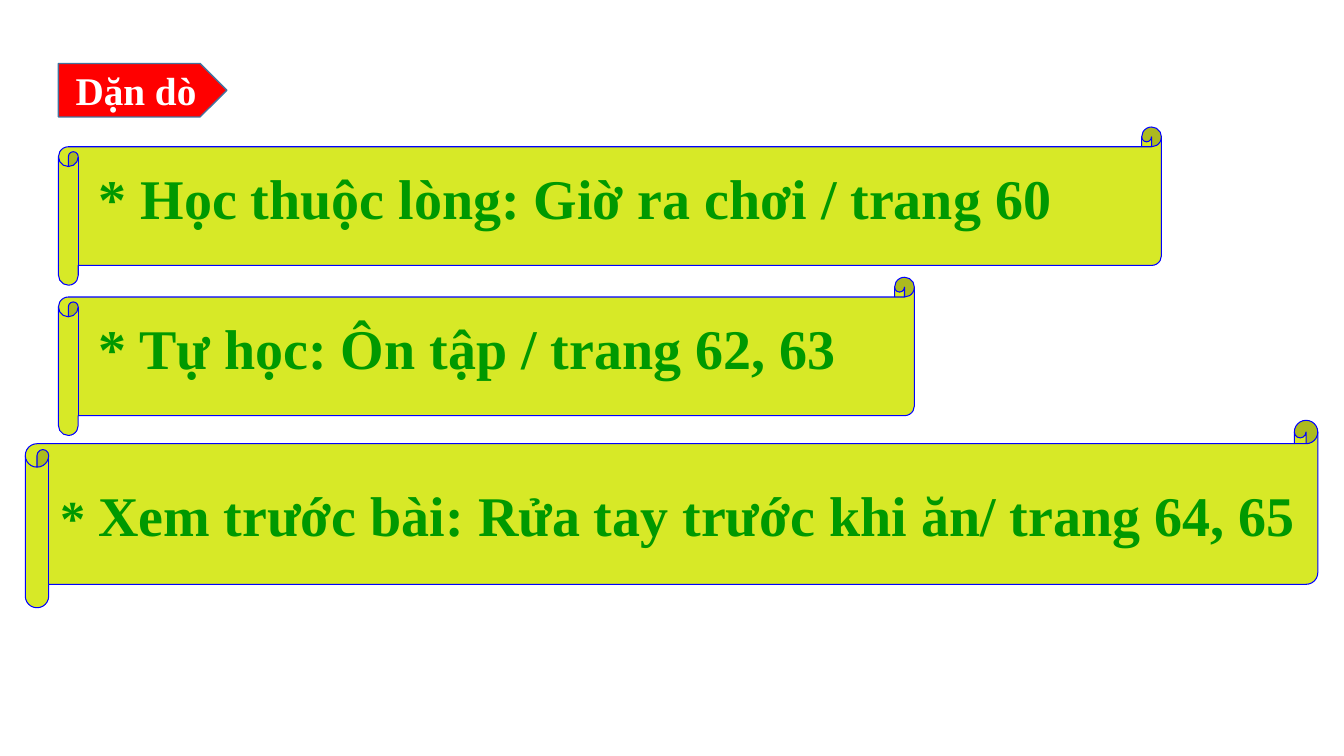
from pptx import Presentation
from pptx import util as u
from pptx.dml.color import RGBColor
from pptx.enum import shapes, text


def color(hex_code):
    return RGBColor.from_string(hex_code)


class HomeworkSlide:
    FONT = "Times New Roman"
    GREEN, LIME, BLUE = "009900", "D7E927", "0000FF"
    RED, STEEL, WHITE = "FF0000", "43739E", "FFFFFF"

    def __init__(self, deck):
        self.width, self.height = deck.slide_width, deck.slide_height
        self.slide = deck.slides.add_slide(deck.slide_layouts[6])

    def place(self, left, top, width, height):
        """Turn percentages of the slide's size into lengths."""
        return [u.Emu(round(share * size / 100)) for share, size in
                zip((left, top, width, height), (self.width, self.height) * 2)]

    def shape(self, kind, box, fill, line, line_width):
        item = self.slide.shapes.add_shape(kind, *self.place(*box))
        item.shadow.inherit = False
        item.fill.solid()
        item.fill.fore_color.rgb = color(fill)
        item.line.color.rgb = color(line)
        item.line.width = u.Pt(line_width)
        return item

    def scroll(self, *box):
        banner = self.shape(shapes.MSO_SHAPE.HORIZONTAL_SCROLL, box,
                            self.LIME, self.BLUE, 0.75)
        banner.adjustments[0] = 0.125
        return banner

    def letter(self, font, size, hex_code):
        font.name, font.size, font.bold = self.FONT, u.Pt(size), True
        font.color.rgb = color(hex_code)

    def centre(self, item):
        """Centre an item's text both ways and return its paragraph."""
        item.text_frame.vertical_anchor = text.MSO_ANCHOR.MIDDLE
        paragraph = item.text_frame.paragraphs[0]
        paragraph.alignment = text.PP_ALIGN.CENTER
        return paragraph

    def tag(self, wording, *box):
        arrow = self.shape(shapes.MSO_SHAPE.PENTAGON, box,
                           self.RED, self.STEEL, 1)
        heading = self.centre(arrow)
        heading.text = wording
        self.letter(heading.font, 28, self.WHITE)

    def task(self, wording, top, scroll_width, text_width):
        """A scroll with its wording in a text box on top."""
        self.scroll(4.35, top, scroll_width, 20.93)
        label = self.slide.shapes.add_textbox(
            *self.place(6.6, top + 4.13, text_width, 10.27))
        frame = label.text_frame
        frame.word_wrap = True
        frame.auto_size = text.MSO_AUTO_SIZE.SHAPE_TO_FIT_TEXT
        frame.paragraphs[0].text = wording
        self.letter(frame.paragraphs[0].font, 40, self.GREEN)

    def preview(self, star, wording, *box):
        """A scroll holding its own wording, after a smaller star."""
        banner = self.scroll(*box)
        banner.text_frame.word_wrap = False
        sentence = self.centre(banner)
        for part, size in ((star, 36), (wording, 40)):
            run = sentence.add_run()
            run.text = part
            self.letter(run.font, size, self.GREEN)


def main():
    deck = Presentation()
    deck.slide_width, deck.slide_height = u.Inches(13.33), u.Inches(7.5)
    homework = HomeworkSlide(deck)

    # Poem to learn by heart
    homework.task("* Học thuộc lòng: Giờ ra chơi / trang 60", 16.8, 82.07, 78.39)

    # Heading
    homework.tag("Dặn dò", 4.35, 8.4, 12.53, 7.07)

    # Next lesson, behind the self-study scroll
    homework.preview("* ", "Xem trước bài: Rửa tay trước khi ăn/ trang 64, 65",
                     1.88, 55.6, 96.17, 24.8)

    # Self-study
    homework.task("* Tự học: Ôn tập / trang 62, 63", 36.67, 63.69, 57.69)

    deck.save("out.pptx")


if __name__ == "__main__":
    main()
